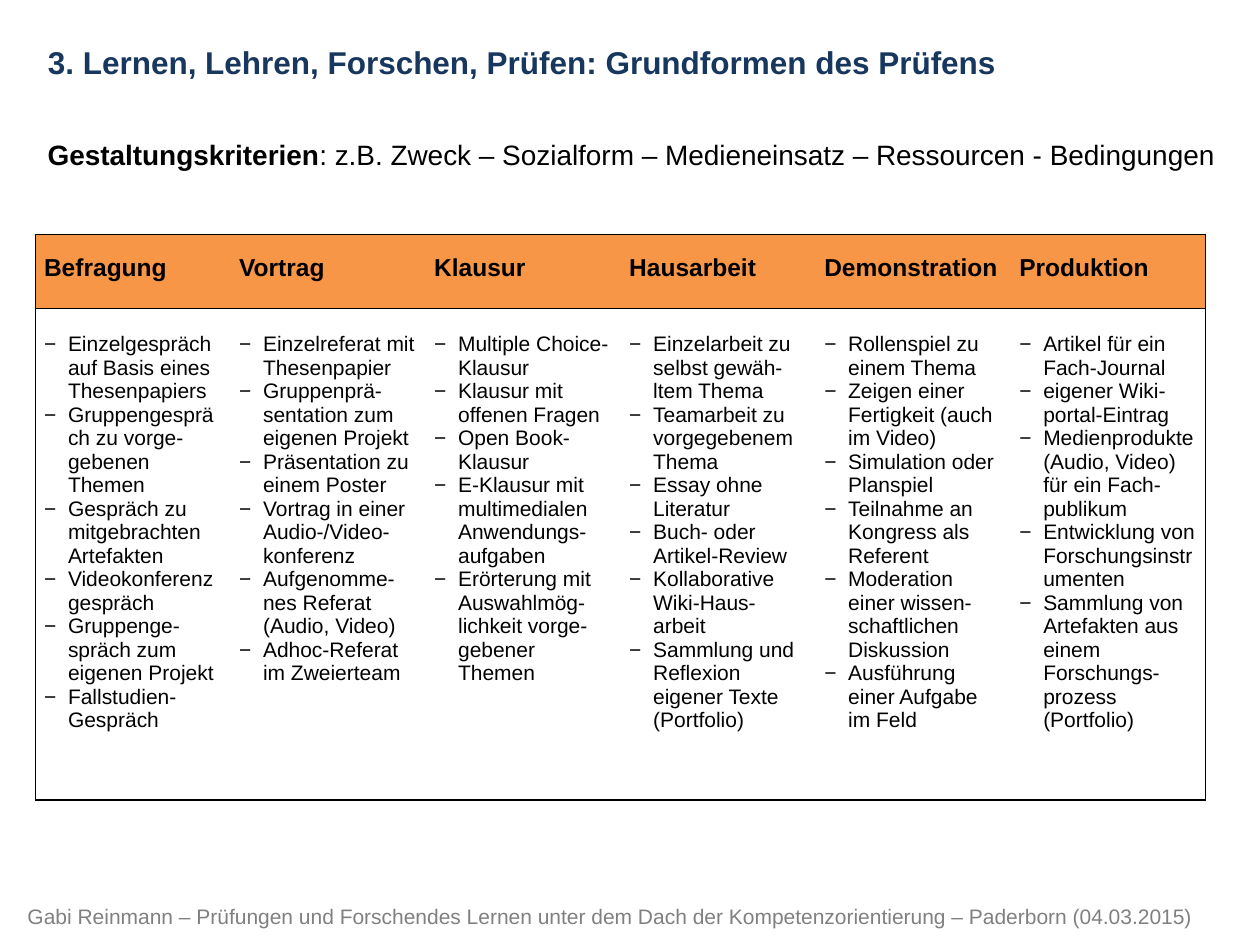
import pptx
import pptx.util
import pptx.dml.color
import pptx.enum.text
import pptx.oxml.ns
import lxml.etree

Inch, Pt = pptx.util.Inches, pptx.util.Pt
RGB = pptx.dml.color.RGBColor.from_string
Align = pptx.enum.text.PP_ALIGN
Anchor = pptx.enum.text.MSO_ANCHOR

TITLE = "3. Lernen, Lehren, Forschen, Prüfen: Grundformen des Prüfens"
LEAD = "Gestaltungskriterien"
REST = ": z.B. Zweck – Sozialform – Medieneinsatz – Ressourcen - Bedingungen"
FOOT = ("Gabi Reinmann – Prüfungen und Forschendes Lernen unter dem Dach "
        "der Kompetenzorientierung – Paderborn (04.03.2015)")
FORMS = {
    "Befragung": [
        "Einzelgespräch auf Basis eines Thesenpapiers",
        "Gruppengespräch zu vorge-gebenen Themen",
        "Gespräch zu mitgebrachten Artefakten",
        "Videokonferenzgespräch",
        "Gruppenge-spräch zum eigenen Projekt",
        "Fallstudien-Gespräch",
    ],
    "Vortrag": [
        "Einzelreferat mit Thesenpapier",
        "Gruppenprä-sentation zum eigenen Projekt",
        "Präsentation zu einem Poster",
        "Vortrag in einer Audio-/Video-konferenz",
        "Aufgenomme-nes Referat (Audio, Video)",
        "Adhoc-Referat im Zweierteam",
    ],
    "Klausur": [
        "Multiple Choice-Klausur",
        "Klausur mit offenen Fragen",
        "Open Book-Klausur",
        "E-Klausur mit multimedialen Anwendungs-aufgaben",
        "Erörterung mit Auswahlmög-lichkeit vorge-gebener Themen",
    ],
    "Hausarbeit": [
        "Einzelarbeit zu selbst gewäh-ltem Thema",
        "Teamarbeit zu vorgegebenem Thema",
        "Essay ohne Literatur",
        "Buch- oder Artikel-Review",
        "Kollaborative Wiki-Haus-arbeit",
        "Sammlung und Reflexion eigener Texte (Portfolio)",
    ],
    "Demonstration": [
        "Rollenspiel zu einem Thema",
        "Zeigen einer Fertigkeit (auch im Video)",
        "Simulation oder Planspiel",
        "Teilnahme an Kongress als Referent",
        "Moderation einer wissen-schaftlichen Diskussion",
        "Ausführung einer Aufgabe im Feld",
    ],
    "Produktion": [
        "Artikel für ein Fach-Journal",
        "eigener Wiki-portal-Eintrag",
        "Medienprodukte (Audio, Video) für ein Fach-publikum",
        "Entwicklung von Forschungsinstrumenten",
        "Sammlung von Artefakten aus einem Forschungs-prozess (Portfolio)",
    ],
}

THEME = {
    "font": "Arial", "line": "000000", "head fill": "F79646",
    "title": {"size": 18, "color": "17375E", "bold": True},
    "lead": {"size": 16, "color": "000000", "bold": True},
    "rest": {"size": 16, "color": "000000", "bold": False},
    "head": {"size": 14, "color": "000000", "bold": True},
    "item": {"size": 12, "color": "000000", "bold": False},
    "foot": {"size": 12, "color": "808080", "bold": False},
}
LEFT, TOP, WIDTH = 0.28, 1.86, 9.29
ROWS = (0.59, 3.9)
PADS = (0.16, 0.19)
HANG = Inch(0.19)


def put(para, text, role):
    style = THEME[role]
    run = para.add_run()
    run.text = text
    look = {"name": THEME["font"], "size": Pt(style["size"]), "bold": style["bold"]}
    for key, value in look.items():
        setattr(run.font, key, value)
    run.font.color.rgb = RGB(style["color"])


def node(parent, tag, **attrs):
    return lxml.etree.SubElement(parent, pptx.oxml.ns.qn(tag), attrs)


def place(shape, box, parts):
    """Move a text shape to its box and fill one unwrapped line."""
    for key, value in zip(("left", "top", "width", "height"), box):
        setattr(shape, key, Inch(value))
    frame = shape.text_frame
    frame.word_wrap = False
    frame.auto_size = pptx.enum.text.MSO_AUTO_SIZE.NONE
    frame.vertical_anchor = Anchor.TOP
    para = frame.paragraphs[0]
    para.alignment = Align.LEFT
    for text, role in parts:
        put(para, text, role)


def edge(cell, sides):
    """Draw the named sides and clear the others."""
    props = cell._tc.get_or_add_tcPr()
    for side in "LRTB":
        line = node(props, "a:ln" + side, w=str(Pt(0.75)))
        if side in sides:
            node(node(line, "a:solidFill"), "a:srgbClr", val=THEME["line"])
        else:
            node(line, "a:noFill")


def dash(para):
    props = para._p.get_or_add_pPr()
    props.set("marL", str(HANG))
    props.set("indent", str(-HANG))
    node(props, "a:buFont", typeface=THEME["font"])
    node(props, "a:buChar", char="−")


def fill(cell, lines, role, pad):
    look = {"margin_left": Inch(0.07), "margin_right": Inch(0.07),
            "margin_top": Inch(pad), "margin_bottom": 0,
            "vertical_anchor": Anchor.TOP}
    for key, value in look.items():
        setattr(cell, key, value)
    frame = cell.text_frame
    for i, text in enumerate(lines):
        para = frame.add_paragraph() if i else frame.paragraphs[0]
        put(para, text, role)
        if role == "item":
            dash(para)
        else:
            para.alignment = Align.JUSTIFY


def grid(slide):
    count = len(FORMS)
    frame = slide.shapes.add_table(len(ROWS), count, Inch(LEFT), Inch(TOP),
                                   Inch(WIDTH), Inch(sum(ROWS)))
    table = frame.table
    table.first_row = table.horz_banding = False
    for row, high in zip(table.rows, ROWS):
        row.height = Inch(high)
    for col, (name, items) in enumerate(FORMS.items()):
        table.columns[col].width = Inch(WIDTH / count)
        ends = ("L" if col == 0 else "") + ("R" if col == count - 1 else "")
        head, body = table.cell(0, col), table.cell(1, col)
        for cell in (head, body):
            edge(cell, "TB" + ends)
        head.fill.solid()
        head.fill.fore_color.rgb = RGB(THEME["head fill"])
        body.fill.background()
        fill(head, [name], "head", PADS[0])
        fill(body, items, "item", PADS[1])


def main():
    deck = pptx.Presentation()
    deck.slide_width, deck.slide_height = Inch(10), Inch(7.5)
    slide = deck.slides.add_slide(deck.slide_layouts.get_by_name("Title Only"))
    place(slide.shapes.title, (LEFT, 0.29, 7.8, 0.4), [(TITLE, "title")])
    for box, parts in (
        ((LEFT, 1.04, 9.58, 0.37), [(LEAD, "lead"), (REST, "rest")]),
        ((0.12, 7.12, 9.46, 0.3), [(FOOT, "foot")]),
    ):
        place(slide.shapes.add_textbox(0, 0, 0, 0), box, parts)
    grid(slide)
    deck.save("out.pptx")


if __name__ == "__main__":
    main()
